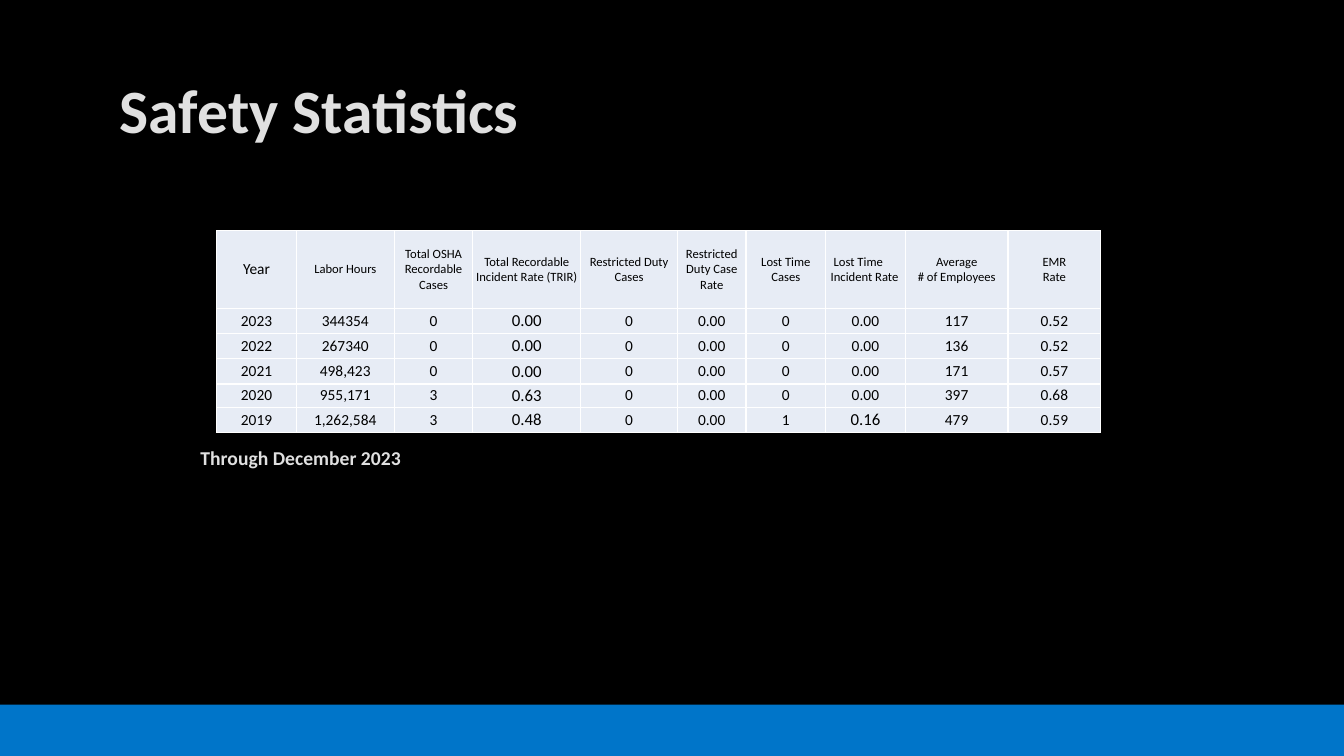
"""Build the Safety Statistics slide."""
from lxml import etree
from pptx import Presentation
from pptx import util as u
from pptx.dml.color import RGBColor
from pptx.enum import shapes, text
from pptx.oxml.ns import qn

COLORS = {"back": "000000", "bar": "0075C9", "light": "E0E0E0",
          "cell": "E7ECF5", "ink": "000000", "border": "FFFFFF"}
COLS = [0.79, 0.97, 0.78, 1.07, 0.96, 0.68, 0.79, 0.79, 1.02, 0.92]
ROWS = [0.77, 0.25, 0.25, 0.25, 0.23, 0.25]
DATA = [
    ["Year", "Labor Hours", "Total OSHA Recordable Cases",
     "Total Recordable Incident Rate (TRIR)", "Restricted Duty Cases",
     "Restricted Duty Case Rate", "Lost Time Cases", "Lost Time\nIncident Rate",
     "Average\n# of Employees", "EMR\nRate"],
    ["2023", "344354", "0", "0.00", "0", "0.00", "0", "0.00", "117", "0.52"],
    ["2022", "267340", "0", "0.00", "0", "0.00", "0", "0.00", "136", "0.52"],
    ["2021", "498,423", "0", "0.00", "0", "0.00", "0", "0.00", "171", "0.57"],
    ["2020", "955,171", "3", "0.63", "0", "0.00", "0", "0.00", "397", "0.68"],
    ["2019", "1,262,584", "3", "0.48", "0", "0.00", "1", "0.16", "479", "0.59"],
]
TRIR, LOST_RATE = 3, 7


def set_font(p, size, color, bold=False):
    p.font.name = "Calibri"
    p.font.size = u.Pt(size)
    p.font.bold = bold
    p.font.color.rgb = RGBColor.from_string(COLORS[color])


def add_borders(cell):
    tcPr = cell._tc.get_or_add_tcPr()
    for i, side in enumerate(("a:lnL", "a:lnR", "a:lnT", "a:lnB")):
        ln = etree.Element(qn(side), w=str(u.Pt(1)))
        fill = etree.SubElement(ln, qn("a:solidFill"))
        etree.SubElement(fill, qn("a:srgbClr"), val=COLORS["border"])
        tcPr.insert(i, ln)


prs = Presentation()
prs.slide_width, prs.slide_height = u.Inches(13.33), u.Inches(7.5)
s = prs.slides.add_slide(prs.slide_layouts[6])
s.background.fill.solid()
s.background.fill.fore_color.rgb = RGBColor.from_string(COLORS["back"])

bar = s.shapes.add_shape(shapes.MSO_SHAPE.RECTANGLE, 0, u.Inches(6.99),
                         prs.slide_width, u.Inches(0.51))
bar.shadow.inherit = False
bar.fill.solid()
bar.fill.fore_color.rgb = RGBColor.from_string(COLORS["bar"])
bar.line.fill.background()

for words, box, size, spacing in [
    ("Safety Statistics", (1.09, 0.75, 10.91, 1.62), 44, 0.89),
    ("Through December 2023", (1.89, 4.39, 4.86, 1.69), 14, 0.94),
]:
    tf = s.shapes.add_textbox(*map(u.Inches, box)).text_frame
    tf.word_wrap = True
    p = tf.paragraphs[0]
    p.text = words
    p.line_spacing = spacing
    set_font(p, size, "light", True)

table = s.shapes.add_table(len(ROWS), len(COLS), u.Inches(2.15), u.Inches(2.29),
                           u.Inches(sum(COLS)), u.Inches(sum(ROWS))).table
for col, width in zip(table.columns, COLS):
    col.width = u.Inches(width)
for row, height in zip(table.rows, ROWS):
    row.height = u.Inches(height)

for r, values in enumerate(DATA):
    for c, value in enumerate(values):
        cell = table.cell(r, c)
        cell.margin_left = cell.margin_right = cell.margin_top = cell.margin_bottom = 0
        cell.vertical_anchor = text.MSO_ANCHOR.MIDDLE
        cell.fill.solid()
        cell.fill.fore_color.rgb = RGBColor.from_string(COLORS["cell"])
        add_borders(cell)
        p = cell.text_frame.paragraphs[0]
        p.text = value
        p.alignment = text.PP_ALIGN.CENTER
        if r == 0:
            size = 11 if c == 0 else 9
        else:
            size = 12 if c == TRIR or value == "0.16" else 11
        set_font(p, size, "ink")

p = table.cell(0, LOST_RATE).text_frame.paragraphs[0]
p.alignment = text.PP_ALIGN.LEFT
pPr = p._p.get_or_add_pPr()
pPr.set("marL", str(u.Inches(0.05)))
pPr.set("indent", str(u.Inches(0.03)))

prs.save("out.pptx")
